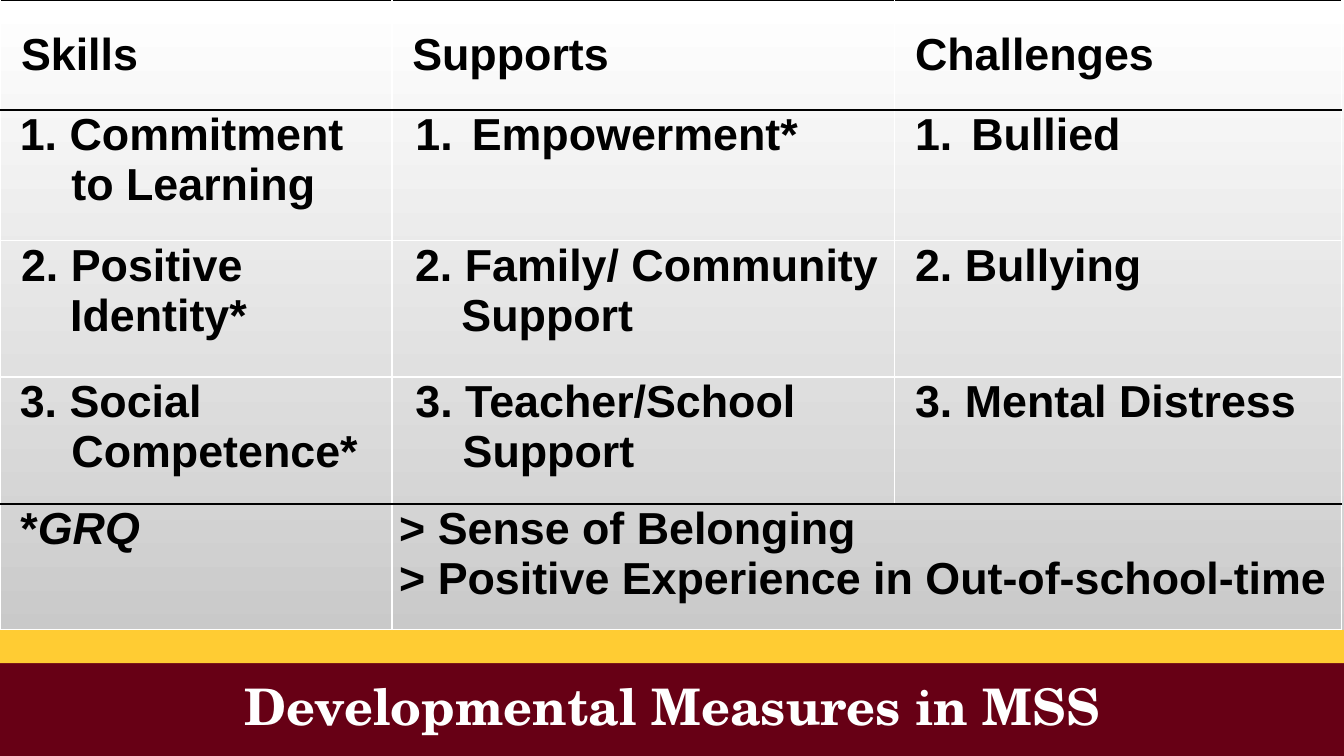
from lxml.etree import SubElement
from pptx import Presentation
from pptx.dml.color import RGBColor
from pptx.enum.shapes import MSO_SHAPE as Shape
from pptx.enum.text import MSO_ANCHOR as Anchor, MSO_AUTO_SIZE as AutoSize, PP_ALIGN as Align
from pptx.oxml.ns import qn
from pptx.util import Cm, Pt

COLORS = {"maroon": "670015", "gold": "FFCC33", "white": "FFFFFF", "black": "000000", "gray": "BFBFBF"}
TITLE = "Developmental Measures in MSS"
COLUMN_WIDTHS = [9.86, 12.67, 11.25]
ROW_HEIGHTS = [2.77, 3.3, 3.43, 3.2, 3.17]
BLACK_RULES = {0, 1, 4}
HEADINGS = ["Skills", "Supports", "Challenges"]
MEASURES = [
    [("1. Commitment to Learning", 1.6, -1.3), ("Empowerment*", 1.83, -1.42), ("Bullied", 1.75, -1.42)],
    [("2. Positive Identity*", 1.57, -1.24), ("2. Family/ Community Support", 1.57, -1.17), ("2. Bullying", 0.33, 0)],
    [("3. Social Competence*", 1.6, -1.3), ("3. Teacher/School Support", 1.6, -1.19), ("3. Mental Distress", 0.33, 0)],
]
NUMBERED = {"Empowerment*", "Bullied"}
PROFILE_MEASURES = ["> Sense of Belonging", "> Positive Experience in Out-of-school-time"]
BARS = [("maroon", 0, 16.71, 33.87, 2.34), ("gold", 0, 15.87, 33.87, 0.84)]


def rgb(name):
    return RGBColor.from_string(COLORS[name])


def add_text(paragraph, text, size=32, font="Arial", color="black", italic=False,
             margin=0, indent=0, numbered=False):
    properties = paragraph._p.get_or_add_pPr()
    properties.set("marL", str(Cm(margin)))
    properties.set("indent", str(Cm(indent)))
    if numbered:
        SubElement(properties, qn("a:buFont"), typeface="+mj-lt")
        SubElement(properties, qn("a:buAutoNum"), type="arabicPeriod")
    run = paragraph.add_run()
    run.text = text
    run.font.size = Pt(size)
    run.font.name = font
    run.font.bold = True
    run.font.italic = italic
    run.font.color.rgb = rgb(color)


def format_cell(cell, row):
    cell.margin_left = cell.margin_right = Cm(0.18)
    cell.margin_top = cell.margin_bottom = 0
    cell.vertical_anchor = Anchor.MIDDLE if row == 0 else Anchor.TOP
    cell.fill.background()
    properties = cell._tc.get_or_add_tcPr()
    edges = {
        "L": "white",
        "R": "white",
        "T": "black" if row in BLACK_RULES else "white",
        "B": "black" if row + 1 in BLACK_RULES else "white",
    }
    for position, (side, color) in enumerate(edges.items()):
        line = SubElement(properties, qn(f"a:ln{side}"), w=str(Pt(1)))
        fill = SubElement(line, qn("a:solidFill"))
        SubElement(fill, qn("a:srgbClr"), val=COLORS[color])
        properties.insert(position, line)


def add_bars(slide):
    for color, *box in BARS:
        bar = slide.shapes.add_shape(Shape.RECTANGLE, *map(Cm, box))
        bar.shadow.inherit = False
        bar.fill.solid()
        bar.fill.fore_color.rgb = rgb(color)
        bar.line.fill.background()


def format_title(slide):
    title = slide.shapes.title
    slide.shapes._spTree.append(title._element)
    title.left, title.top, title.width, title.height = map(Cm, (0, 16.71, 33.87, 2.34))
    frame = title.text_frame
    frame.auto_size = AutoSize.NONE
    frame.word_wrap = True
    frame.vertical_anchor = Anchor.MIDDLE
    paragraph = frame.paragraphs[0]
    paragraph.alignment = Align.CENTER
    paragraph.line_spacing = 0.9
    add_text(paragraph, TITLE, size=36, font="TeX Gyre Schola", color="white")


def add_measures(slide):
    table = slide.shapes.add_table(
        len(ROW_HEIGHTS), len(COLUMN_WIDTHS), Cm(0.02), 0,
        Cm(sum(COLUMN_WIDTHS)), Cm(sum(ROW_HEIGHTS))).table
    table.first_row = table.horz_banding = False
    for column, width in zip(table.columns, COLUMN_WIDTHS):
        column.width = Cm(width)
    for index, (row, height) in enumerate(zip(table.rows, ROW_HEIGHTS)):
        row.height = Cm(height)
        for cell in row.cells:
            format_cell(cell, index)
    rows = [[(heading, 0.33, 0) for heading in HEADINGS], *MEASURES]
    for index, entries in enumerate(rows):
        for column, (text, margin, indent) in enumerate(entries):
            add_text(table.cell(index, column).text_frame.paragraphs[0], text,
                     margin=margin, indent=indent, numbered=text in NUMBERED)
    last = len(rows)
    label = table.cell(last, 0).text_frame.paragraphs[0]
    add_text(label, " *")
    add_text(label, "GRQ", italic=True)
    merged = table.cell(last, 1)
    merged.merge(table.cell(last, 2))
    frame = merged.text_frame
    for index, text in enumerate(PROFILE_MEASURES):
        add_text(frame.add_paragraph() if index else frame.paragraphs[0], text)


def main():
    presentation = Presentation()
    presentation.slide_width, presentation.slide_height = Cm(33.87), Cm(19.05)
    slide = presentation.slides.add_slide(presentation.slide_layouts[5])
    background = slide.background.fill
    background.gradient()
    background.gradient_angle = 270
    for stop, color in zip(background.gradient_stops, ("white", "gray")):
        stop.color.rgb = rgb(color)
    add_bars(slide)
    format_title(slide)
    add_measures(slide)
    presentation.save("out.pptx")


if __name__ == "__main__":
    main()
